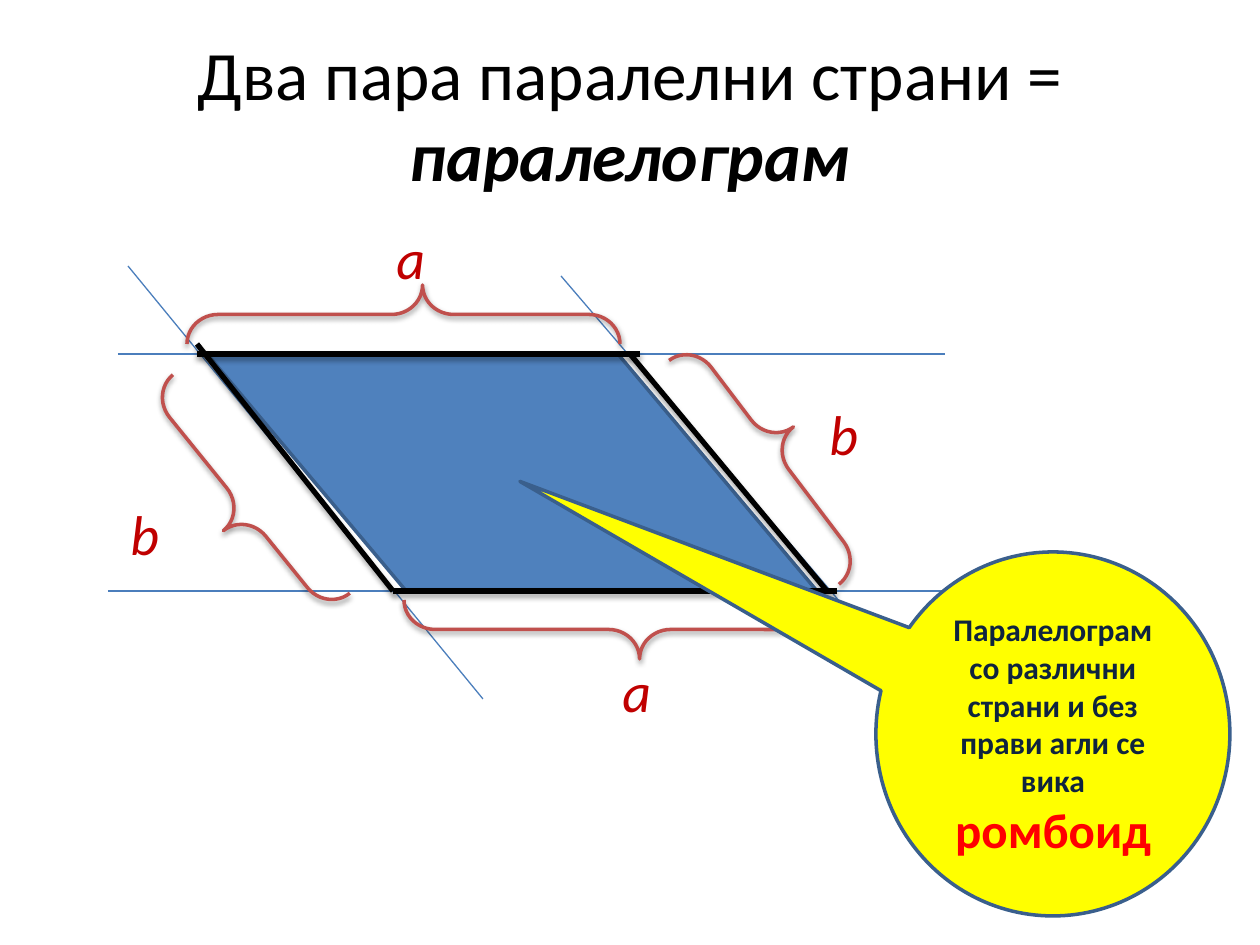
from lxml import etree
from pptx import Presentation
from pptx.dml.color import RGBColor
from pptx.enum.shapes import MSO_CONNECTOR, MSO_SHAPE
from pptx.enum.text import MSO_ANCHOR, MSO_AUTO_SIZE, PP_ALIGN
from pptx.oxml.ns import qn
from pptx.util import Emu, Pt

STRAIGHT = MSO_CONNECTOR.STRAIGHT
BRACE = MSO_SHAPE.RIGHT_BRACE
PARALLELOGRAM = MSO_SHAPE.PARALLELOGRAM
CALLOUT = MSO_SHAPE.OVAL_CALLOUT
MIDDLE = MSO_ANCHOR.MIDDLE
NO_FIT, GROW = MSO_AUTO_SIZE.NONE, MSO_AUTO_SIZE.SHAPE_TO_FIT_TEXT
CENTER = PP_ALIGN.CENTER

PX_PER_INCH = 126


def px(length):
    return Emu(round(length * 914400 / PX_PER_INCH))


def color(value):
    return RGBColor.from_string(value)


class Drawing:
    font = "Calibri"
    black = "000000"
    blue, outline, thin_line = "4F81BD", "3A5F8C", "4B7EBC"
    brace_red, label_red, red = "C0504D", "C00000", "FF0000"
    yellow, navy = "FFFF00", "0F243E"

    def __init__(self, page):
        self.page = page

    def add_spans(self, para, spans):
        """Fill a paragraph with (text, size, colour, bold, italic) spans."""
        for text, size, tint, bold, italic in spans:
            span = para.add_run()
            span.text = text
            span.font.name, span.font.size = self.font, Pt(size)
            span.font.bold, span.font.italic = bold, italic
            span.font.color.rgb = color(tint)

    def effects(self, shape, opacity=0, distance=0):
        """Add a downward shadow, or an empty effect list without opacity."""
        effects = etree.SubElement(shape.element.spPr, qn("a:effectLst"))
        if opacity:
            shadow = etree.SubElement(
                effects, qn("a:outerShdw"), blurRad=str(int(Pt(3.1))),
                dist=str(int(Pt(distance))), dir="5400000", rotWithShape="0")
            tint = etree.SubElement(shadow, qn("a:srgbClr"), val=self.black)
            etree.SubElement(tint, qn("a:alpha"), val=str(opacity * 1000))

    def title(self, box, spans):
        title = self.page.shapes.title
        title.left, title.top, title.width, title.height = map(px, box)
        frame = title.text_frame
        frame.word_wrap, frame.auto_size = True, NO_FIT
        frame.vertical_anchor = MIDDLE
        para = frame.paragraphs[0]
        para.alignment, para.line_spacing = CENTER, 0.97
        self.add_spans(para, spans)

    def shape(self, kind, box, adjustments, line, fill=None):
        shape = self.page.shapes.add_shape(kind, *map(px, box))
        for index, value in enumerate(adjustments):
            shape.adjustments[index] = value
        if fill:
            shape.fill.solid()
            shape.fill.fore_color.rgb = color(fill)
        else:
            shape.fill.background()
        shape.line.color.rgb = color(line)
        shape.line.width = Pt(2)
        return shape

    def flip(self, shape, direction):
        shape.element.spPr.find(qn("a:xfrm")).set(direction, "1")

    def line(self, ends, side=False):
        line = self.page.shapes.add_connector(STRAIGHT, *map(px, ends))
        line.line.color.rgb = color(self.black if side else self.thin_line)
        line.line.width = Pt(3 if side else 0.75)
        if side:
            self.effects(line, 35, 1.8)
        else:
            self.effects(line)

    def brace(self, box, rotation):
        brace = self.shape(BRACE, box, (0.527, 0.456), self.brace_red)
        brace.rotation = rotation
        self.effects(brace, 38, 1.6)
        return brace

    def label(self, left, top, text):
        box = self.page.shapes.add_textbox(px(left), px(top), px(88), px(81))
        frame = box.text_frame
        frame.word_wrap, frame.auto_size = True, GROW
        self.add_spans(frame.paragraphs[0],
                       [(text, 32, self.label_red, False, True)])

    def callout(self, box, adjustments, spans):
        callout = self.shape(CALLOUT, box, adjustments, self.outline,
                             self.yellow)
        callout.shadow.inherit = False
        frame = callout.text_frame
        frame.word_wrap, frame.vertical_anchor = True, MIDDLE
        para = frame.paragraphs[0]
        para.alignment = CENTER
        self.add_spans(para, spans)


def main():
    deck = Presentation()
    deck.slide_width, deck.slide_height = px(1260), px(945)
    drawing = Drawing(deck.slides.add_slide(deck.slide_layouts[5]))

    # Filled parallelogram and title
    body = drawing.shape(PARALLELOGRAM, (207, 354, 610, 237), (0.84,),
                         drawing.outline, drawing.blue)
    body.shadow.inherit = False
    drawing.flip(body, "flipH")
    drawing.title((63, 38, 1134, 158), [
        ("Два пара паралелни страни = ", 39.6, drawing.black, False, False),
        ("паралелограм", 39.6, drawing.black, True, True)])

    # Two pairs of parallel lines
    for ends in ((118, 354, 945, 354), (108, 591, 1033, 591),
                 (128, 266, 483, 699), (561, 276, 906, 679)):
        drawing.line(ends)

    # Sides of the parallelogram
    for ends in ((197, 354, 640, 354), (393, 591, 837, 591),
                 (197, 344, 393, 591), (630, 354, 827, 591)):
        drawing.line(ends, side=True)

    # Braces and labels for sides a, then b
    drawing.brace((591, 413, 59, 433), 90)
    drawing.label(610, 650, "а")
    top_brace = drawing.brace((374, 98, 59, 433), 270)
    drawing.flip(top_brace, "flipV")
    drawing.label(384, 217, "а")
    drawing.brace((748, 314, 59, 281), 322.8)
    drawing.brace((209, 362, 59, 281), 141)
    drawing.label(817, 393, "b")
    drawing.label(118, 493, "b")

    # Callout naming the figure
    drawing.callout((876, 552, 354, 364), (-1.506, -0.694), [
        ("Паралелограм со различни страни и без прави агли се вика ",
         18, drawing.navy, True, False),
        ("ромбоид", 28, drawing.red, True, False)])

    deck.save("out.pptx")


if __name__ == "__main__":
    main()
